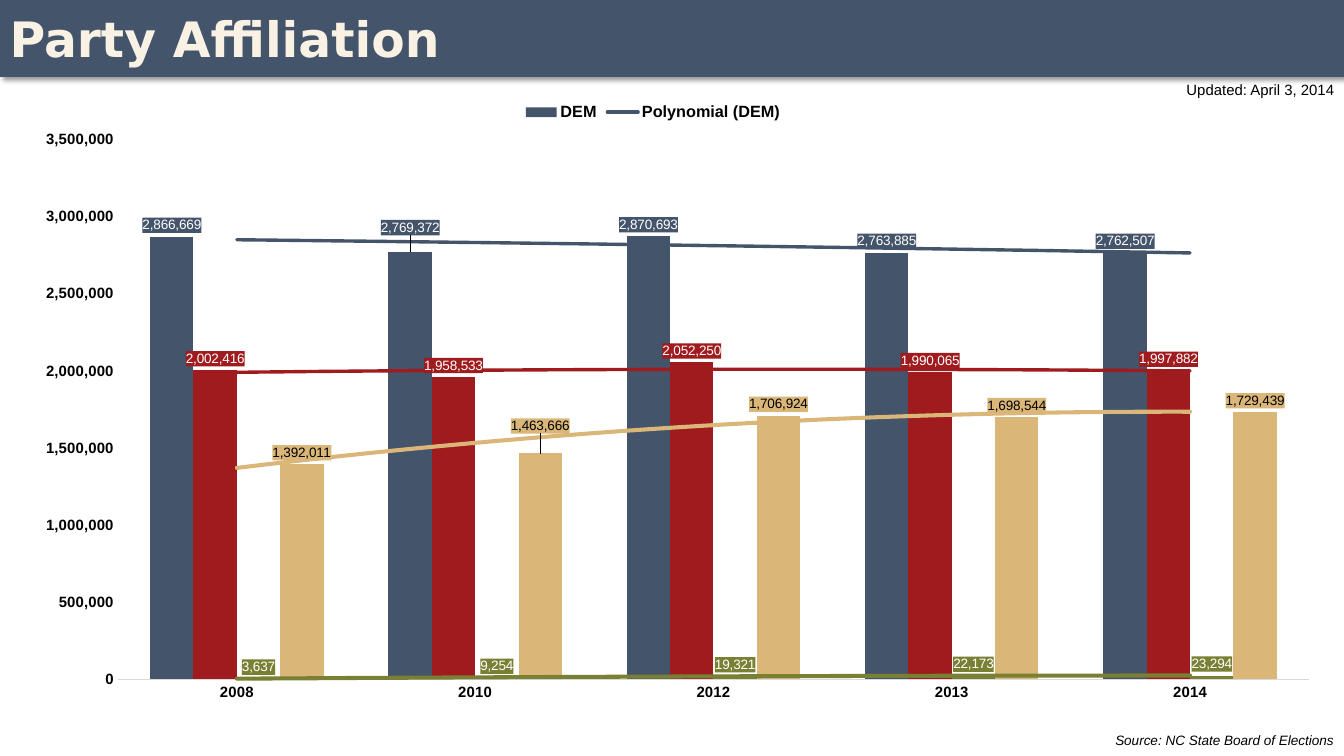
from copy import deepcopy
from pptx import Presentation
from pptx.chart.data import CategoryChartData
from pptx.dml.color import RGBColor
from pptx.enum.chart import (
    XL_CHART_TYPE, XL_LABEL_POSITION, XL_LEGEND_POSITION, XL_TICK_MARK)
from pptx.enum.shapes import MSO_SHAPE
from pptx.enum.text import MSO_ANCHOR, PP_ALIGN
from pptx.oxml import parse_xml
from pptx.oxml.ns import nsdecls, qn
from pptx.util import Inches, Pt

NAVY = RGBColor(0x44, 0x54, 0x6A)
RED = RGBColor(0x9F, 0x1B, 0x1E)
OLIVE = RGBColor(0x79, 0x7F, 0x33)
TAN = RGBColor(0xDA, 0xB7, 0x79)
CREAM = RGBColor(0xF8, 0xF1, 0xE4)
GRAY = RGBColor(0xD9, 0xD9, 0xD9)
WHITE = RGBColor(0xFF, 0xFF, 0xFF)
BLACK = RGBColor(0, 0, 0)

WIDTH = 13.78
YEARS = ["2008", "2010", "2012", "2013", "2014"]
PARTIES = [
    ("DEM", NAVY, WHITE, 2.5, -0.02,
     (2866669, 2769372, 2870693, 2763885, 2762507)),
    ("GOP", RED, WHITE, 2.5, None,
     (2002416, 1958533, 2052250, 1990065, 1997882)),
    ("LIB", OLIVE, WHITE, 3, None, (3637, 9254, 19321, 22173, 23294)),
    ("UNA", TAN, BLACK, 3, -0.025,
     (1392011, 1463666, 1706924, 1698544, 1729439)),
]


def chart_xml(tag, body):
    """Make a chart element that holds the given markup."""
    return parse_xml(f'<c:{tag} {nsdecls("c", "a")}>{body}</c:{tag}>')


def layout(target="", **spots):
    """Make a manual layout from fractions of the chart."""
    modes = "".join(f'<c:{key}Mode val="edge"/>' for key in spots if key in "xy")
    sizes = "".join(f'<c:{key} val="{val}"/>' for key, val in spots.items())
    return chart_xml("layout", f"<c:manualLayout>{target}{modes}{sizes}</c:manualLayout>")


def set_font(font, size, color, bold=False, italic=False, name="Arial"):
    """Style a font."""
    font.name, font.size = name, Pt(size)
    font.bold, font.italic = bold, italic
    font.color.rgb = color


def add_band(slide):
    """Draw the title band with its soft shadow."""
    band = slide.shapes.add_shape(
        MSO_SHAPE.RECTANGLE, 0, 0, Inches(WIDTH), Inches(0.78))
    band.fill.solid()
    band.fill.fore_color.rgb = NAVY
    band.line.color.rgb = NAVY
    band.line.width = Pt(1)
    band.shadow.inherit = False
    effects = band._element.spPr.find(qn("a:effectLst"))
    effects.append(parse_xml(
        f'<a:outerShdw {nsdecls("a")} blurRad="50800" dist="38100" dir="2700000">'
        '<a:srgbClr val="000000"><a:alpha val="40000"/></a:srgbClr></a:outerShdw>'))


def add_text(slide, text, box, size, color, align=PP_ALIGN.RIGHT,
             anchor=MSO_ANCHOR.TOP, **style):
    """Add a line of text in a box."""
    frame = slide.shapes.add_textbox(*map(Inches, box)).text_frame
    frame.word_wrap = True
    frame.vertical_anchor = anchor
    para = frame.paragraphs[0]
    para.text = text
    para.alignment = align
    set_font(para.font, size, color, **style)


def add_labels(series, color, ink, lift):
    """Put filled value labels on a series, the second one lifted if asked."""
    labels = series.data_labels
    labels.show_value = True
    labels.number_format = "#,##0"
    labels.number_format_is_linked = False
    labels.position = XL_LABEL_POSITION.OUTSIDE_END
    set_font(labels.font, 10, ink)
    root = labels._element
    root.find(qn("c:numFmt")).addnext(chart_xml(
        "spPr", f'<a:solidFill><a:srgbClr val="{color}"/></a:solidFill>'))
    if lift is not None:
        label = chart_xml("dLbl", '<c:idx val="1"/>')
        label.append(chart_xml(
            "layout", f'<c:manualLayout><c:x val="0"/><c:y val="{lift}"/></c:manualLayout>'))
        for part in root:
            if part.tag != qn("c:showLeaderLines"):
                label.append(deepcopy(part))
        root.insert(0, label)


def add_trend(series, color, width):
    """Add a quadratic trend line to a series."""
    trend = chart_xml(
        "trendline",
        f'<c:spPr><a:ln w="{Pt(width)}" cap="rnd"><a:solidFill>'
        f'<a:srgbClr val="{color}"/></a:solidFill></a:ln></c:spPr>'
        '<c:trendlineType val="poly"/><c:order val="2"/>'
        '<c:dispRSqr val="0"/><c:dispEq val="0"/>')
    series._element.find(qn("c:cat")).addprevious(trend)


def style_axes(chart):
    """Style both axes."""
    years, votes = chart.category_axis, chart.value_axis
    for axis in (years, votes):
        axis.major_tick_mark = axis.minor_tick_mark = XL_TICK_MARK.NONE
        axis.has_major_gridlines = False
        set_font(axis.tick_labels.font, 11, BLACK, bold=True)
    years.format.line.color.rgb = GRAY
    years.format.line.width = Pt(0.75)
    votes.format.line.fill.background()
    votes.minimum_scale, votes.maximum_scale = 0, 3500000
    votes.major_unit = 500000
    votes.tick_labels.number_format = "#,##0"
    votes.tick_labels.number_format_is_linked = False


def style_legend(chart):
    """Show the first party and its trend in a legend at the top."""
    chart.has_legend = True
    legend = chart.legend
    legend.position = XL_LEGEND_POSITION.TOP
    legend.include_in_layout = False
    set_font(legend.font, 12, BLACK, bold=True)
    root = legend._element
    for old in root.findall(qn("c:layout")):
        root.remove(old)
    place = root.find(qn("c:legendPos"))
    place.addnext(layout(x=0.385, y=0.025))
    for index in (7, 6, 5, 3, 2, 1):
        place.addnext(chart_xml(
            "legendEntry", f'<c:idx val="{index}"/><c:delete val="1"/>'))


def add_votes(slide):
    """Add the chart of voters by party and year."""
    data = CategoryChartData(number_format="#,##0")
    data.categories = YEARS
    for name, *_, values in PARTIES:
        data.add_series(name, values)
    chart = slide.shapes.add_chart(
        XL_CHART_TYPE.COLUMN_CLUSTERED,
        *map(Inches, (0.14, 0.86, 13.5, 6.5)), data).chart
    chart.has_title = False
    set_font(chart.font, 10, BLACK)
    plot = chart.plots[0]
    plot.gap_width = 150
    plot.vary_by_categories = False
    for series, (_, color, ink, width, lift, _) in zip(plot.series, PARTIES):
        series.format.fill.solid()
        series.format.fill.fore_color.rgb = color
        add_labels(series, color, ink, lift)
        add_trend(series, color, width)
    style_axes(chart)
    style_legend(chart)
    area = chart._chartSpace.chart.plotArea
    for old in area.findall(qn("c:layout")):
        area.remove(old)
    area.insert(0, layout(
        '<c:layoutTarget val="inner"/>', x=0.079, y=0.087, w=0.905, h=0.852))


def main():
    """Build the slide and save it."""
    deck = Presentation()
    deck.slide_width, deck.slide_height = Inches(WIDTH), Inches(7.75)
    slide = deck.slides.add_slide(deck.slide_layouts[6])
    add_band(slide)
    add_text(slide, "Party Affiliation", (0, 0, WIDTH, 0.78), 36, CREAM,
             PP_ALIGN.LEFT, MSO_ANCHOR.MIDDLE, bold=True, name="DejaVu Sans")
    add_text(slide, "Updated: April 3, 2014", (11.86, 0.78, 1.92, 0.29), 11, BLACK)
    add_text(slide, "Source: NC State Board of Elections",
             (10.88, 7.45, 2.89, 0.27), 10, BLACK, italic=True)
    add_votes(slide)
    deck.save("out.pptx")


if __name__ == "__main__":
    main()
